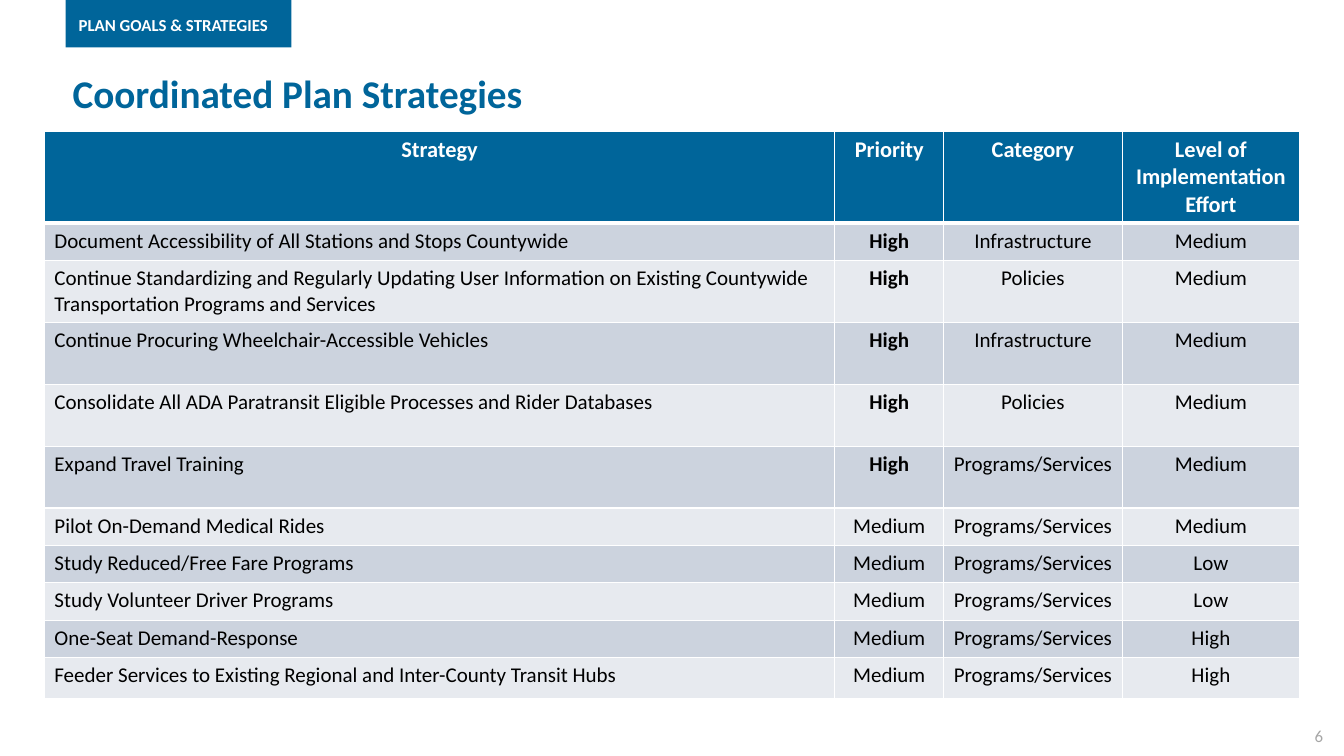
from dataclasses import dataclass

from lxml import etree
from pptx import Presentation
from pptx.dml.color import RGBColor
from pptx.enum.shapes import MSO_SHAPE
from pptx.enum.text import MSO_ANCHOR, MSO_AUTO_SIZE, PP_ALIGN
from pptx.oxml.ns import qn
from pptx.util import Inches, Pt

LEFT, CENTER = PP_ALIGN.LEFT, PP_ALIGN.CENTER
TOP, MIDDLE = MSO_ANCHOR.TOP, MSO_ANCHOR.MIDDLE
RECTANGLE = MSO_SHAPE.RECTANGLE
NO_AUTOFIT = MSO_AUTO_SIZE.NONE
TITLE_ONLY = 5

BLUE = RGBColor(0x00, 0x65, 0x9A)
WHITE = RGBColor(0xFF, 0xFF, 0xFF)
BLACK = RGBColor(0x00, 0x00, 0x00)
GREY = RGBColor(0xA6, 0xA6, 0xA6)
BANDS = (RGBColor(0xCC, 0xD3, 0xDE), RGBColor(0xE7, 0xEA, 0xEF))

FONT = "Calibri"
SLIDE_W, SLIDE_H = Inches(13.33), Inches(7.5)
INSET = Inches(0.13)
TITLE_INDENT = Inches(0.22)
THIN, THICK = Pt(1), Pt(3)


@dataclass(frozen=True)
class Box:
    """A rectangle in percent of the slide's width and height."""
    left: float
    top: float
    width: float
    height: float

    def emu(self) -> tuple[int, int, int, int]:
        return (share(self.left, SLIDE_W), share(self.top, SLIDE_H),
                share(self.width, SLIDE_W), share(self.height, SLIDE_H))


@dataclass(frozen=True)
class Style:
    size: float
    color: RGBColor
    bold: bool = False
    align: PP_ALIGN = LEFT
    line_spacing: float = 1.0


@dataclass(frozen=True)
class Strategy:
    name: str
    priority: str
    category: str
    effort: str
    height: float


TITLE_BOX = Box(3.75, 8.67, 37.88, 8.67)
TAG_BOX = Box(4.88, 0, 16.8, 6.27)
NUMBER_BOX = Box(96.25, 94.67, 3.75, 5.33)
TABLE_BOX = Box(3.3, 17.33, 93.4, 74.93)
COLUMN_SHARES = (58.82, 8.1, 13.28, 13.2)

# Row heights in percent of the slide's height
HEADER, ONE_LINE, TWO_LINES, LAST = 12.13, 4.95, 8.18, 5.4

INFRASTRUCTURE, POLICIES, PROGRAMS = "Infrastructure", "Policies", "Programs/Services"
HIGH, MEDIUM, LOW = "High", "Medium", "Low"

ROWS = (
    Strategy("Strategy", "Priority", "Category", "Level of Implementation Effort", HEADER),
    Strategy("Document Accessibility of All Stations and Stops Countywide",
             HIGH, INFRASTRUCTURE, MEDIUM, ONE_LINE),
    Strategy("Continue Standardizing and Regularly Updating User Information on Existing "
             "Countywide Transportation Programs and Services",
             HIGH, POLICIES, MEDIUM, TWO_LINES),
    Strategy("Continue Procuring Wheelchair-Accessible Vehicles",
             HIGH, INFRASTRUCTURE, MEDIUM, TWO_LINES),
    Strategy("Consolidate All ADA Paratransit Eligible Processes and Rider Databases",
             HIGH, POLICIES, MEDIUM, TWO_LINES),
    Strategy("Expand Travel Training", HIGH, PROGRAMS, MEDIUM, TWO_LINES),
    Strategy("Pilot On-Demand Medical Rides", MEDIUM, PROGRAMS, MEDIUM, ONE_LINE),
    Strategy("Study Reduced/Free Fare Programs", MEDIUM, PROGRAMS, LOW, ONE_LINE),
    Strategy("Study Volunteer Driver Programs", MEDIUM, PROGRAMS, LOW, ONE_LINE),
    Strategy("One-Seat Demand-Response", MEDIUM, PROGRAMS, HIGH, ONE_LINE),
    Strategy("Feeder Services to Existing Regional and Inter-County Transit Hubs",
             MEDIUM, PROGRAMS, HIGH, LAST),
)


def share(percent: float, whole: int) -> int:
    return round(whole * percent / 100)


def write(tf, text: str, style: Style) -> None:
    p = tf.paragraphs[0]
    p.alignment = style.align
    p.line_spacing = style.line_spacing
    r = p.add_run()
    r.text = text
    r.font.name = FONT
    r.font.size = Pt(style.size)
    r.font.bold = style.bold
    r.font.color.rgb = style.color


def frame(s, box: Box, anchor: MSO_ANCHOR, inset: int):
    """Places a shape and returns its text frame, set to wrap at a fixed size."""
    s.left, s.top, s.width, s.height = box.emu()
    tf = s.text_frame
    tf.auto_size = NO_AUTOFIT
    tf.word_wrap = True
    tf.vertical_anchor = anchor
    tf.margin_left = tf.margin_right = tf.margin_top = tf.margin_bottom = inset
    return tf


def set_borders(cell, top: int, bottom: int) -> None:
    """Adds white cell borders; they must precede the fill in the cell's XML."""
    props = cell._tc.get_or_add_tcPr()
    for side, width in (("lnL", THIN), ("lnR", THIN), ("lnT", top), ("lnB", bottom)):
        line = etree.SubElement(props, qn(f"a:{side}"), w=str(int(width)))
        fill = etree.SubElement(line, qn("a:solidFill"))
        etree.SubElement(fill, qn("a:srgbClr"), val=str(WHITE))


def add_title(slide) -> None:
    tf = frame(slide.shapes.title, TITLE_BOX, TOP, INSET)
    tf.margin_left = TITLE_INDENT
    write(tf, "Coordinated Plan Strategies", Style(28, BLUE, True, line_spacing=0.8))


def add_section_tag(slide) -> None:
    s = slide.shapes.add_shape(RECTANGLE, *TAG_BOX.emu())
    s.shadow.inherit = False
    s.fill.solid()
    s.fill.fore_color.rgb = BLUE
    s.line.fill.background()
    tf = frame(s, TAG_BOX, TOP, INSET)
    write(tf, "PLAN GOALS & STRATEGIES", Style(12, WHITE, True, line_spacing=1.1))


def add_slide_number(slide) -> None:
    s = slide.shapes.add_textbox(*NUMBER_BOX.emu())
    write(frame(s, NUMBER_BOX, MIDDLE, 0), "6", Style(12, GREY, align=CENTER))


def add_strategy_table(slide) -> None:
    table = slide.shapes.add_table(len(ROWS), len(COLUMN_SHARES), *TABLE_BOX.emu()).table
    for column, percent in zip(table.columns, COLUMN_SHARES):
        column.width = share(percent, SLIDE_W)
    for i, row in enumerate(ROWS):
        table.rows[i].height = share(row.height, SLIDE_H)
        is_header = i == 0
        for j, text in enumerate((row.name, row.priority, row.category, row.effort)):
            cell = table.cell(i, j)
            set_borders(cell, THICK if i == 1 else THIN, THICK if is_header else THIN)
            cell.fill.solid()
            cell.fill.fore_color.rgb = BLUE if is_header else BANDS[(i - 1) % 2]
            if is_header:
                style = Style(16, WHITE, True, CENTER)
            else:
                style = Style(15, BLACK, j == 1 and text == HIGH, CENTER if j else LEFT)
            write(cell.text_frame, text, style)


def main() -> None:
    prs = Presentation()
    prs.slide_width, prs.slide_height = SLIDE_W, SLIDE_H
    slide = prs.slides.add_slide(prs.slide_layouts[TITLE_ONLY])
    add_title(slide)
    add_slide_number(slide)
    add_section_tag(slide)
    add_strategy_table(slide)
    prs.save("out.pptx")


if __name__ == "__main__":
    main()
